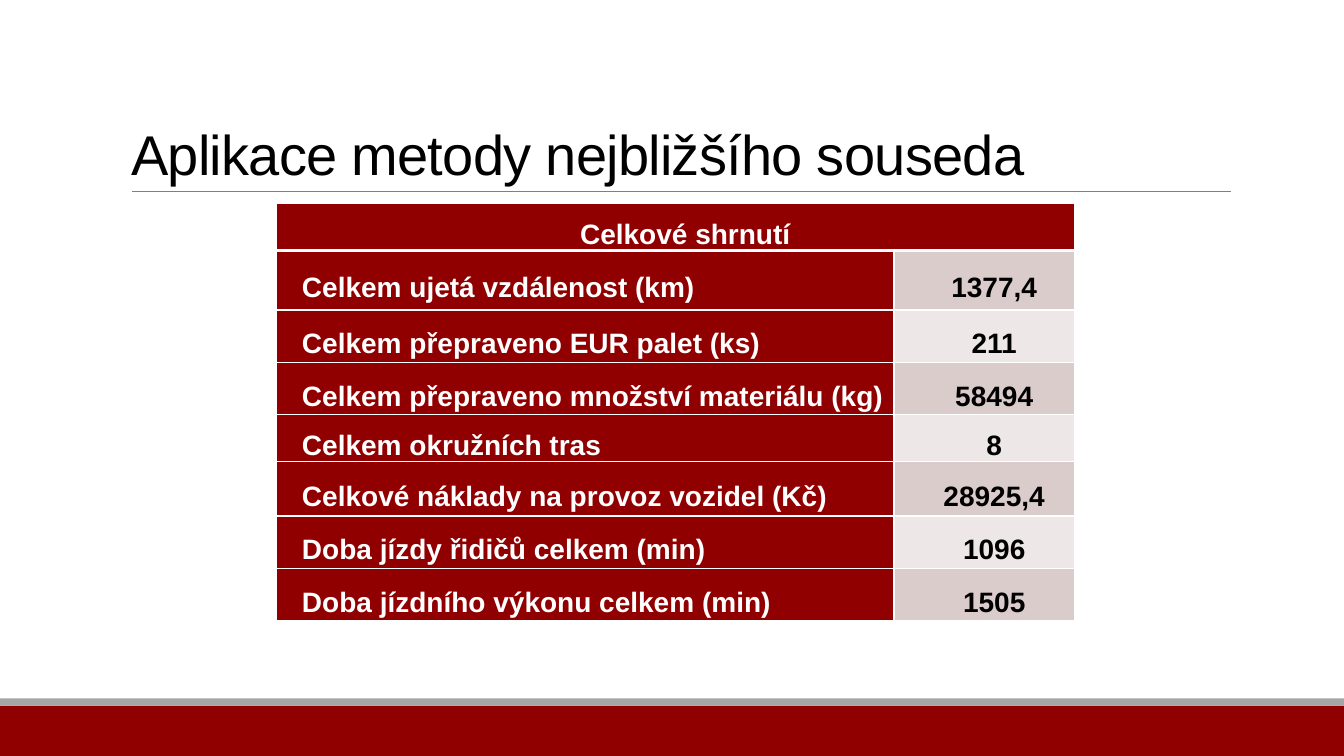
from typing import Any, NamedTuple

from lxml.etree import SubElement
from pptx import Presentation
from pptx.dml.color import RGBColor
from pptx.enum.shapes import MSO_CONNECTOR, MSO_SHAPE
from pptx.enum.text import MSO_ANCHOR as Anchor, MSO_AUTO_SIZE as AutoSize, PP_ALIGN as Align
from pptx.oxml.ns import qn
from pptx.util import Cm, Pt

RED, GREY, RULE_GREY = "900000", "A5A5A5", "808080"
WHITE, BLACK = "FFFFFF", "000000"
STRIPES = ("DBCCCC", "EEE7E7")
FONT = "Arial"


class Band(NamedTuple):
    top: float
    height: float
    color: str


class Row(NamedTuple):
    label: str
    value: str
    height: float


BANDS = (Band(17.78, 1.27, RED), Band(17.6, 0.18, GREY))
HEADING = "Celkové shrnutí"
HEADING_HEIGHT = 0.66
ROWS = (
    Row("Celkem ujetá vzdálenost (km)", "1377,4", 1.5),
    Row("Celkem přepraveno EUR palet (ks)", "211", 1.32),
    Row("Celkem přepraveno množství materiálu (kg)", "58494", 1.32),
    Row("Celkem okružních tras", "8", 0.66),
    Row("Celkové náklady na provoz vozidel (Kč)", "28925,4", 1.37),
    Row("Doba jízdy řidičů celkem (min)", "1096", 1.32),
    Row("Doba jízdního výkonu celkem (min)", "1505", 1.32),
)
COLUMN_WIDTHS = (15.57, 4.55)


def rgb(color: str) -> RGBColor:
    return RGBColor.from_string(color)


def apply(target: Any, **values: Any) -> None:
    """Set each named attribute of the target."""
    for name, value in values.items():
        setattr(target, name, value)


def paint(target: Any, color: str) -> None:
    target.fill.solid()
    target.fill.fore_color.rgb = rgb(color)


def add_band(page: Any, width: int, band: Band) -> None:
    box = page.shapes.add_shape(MSO_SHAPE.RECTANGLE, 0, Cm(band.top), width, Cm(band.height))
    box.shadow.inherit = False
    paint(box, band.color)
    box.line.fill.background()


def add_rule(page: Any) -> None:
    rule = page.shapes.add_connector(MSO_CONNECTOR.STRAIGHT, Cm(3.33), Cm(4.83), Cm(31.01), Cm(4.83))
    rule.line.color.rgb = rgb(RULE_GREY)
    rule.line.width = Pt(0.5)
    SubElement(rule._element.spPr, qn("a:effectLst"))


def set_title(page: Any, text: str) -> None:
    title = page.shapes.title
    apply(title, left=Cm(3.05), top=Cm(0.79), width=Cm(27.94), height=Cm(4.04))
    apply(title.text_frame, text=text, word_wrap=True, auto_size=AutoSize.NONE,
          vertical_anchor=Anchor.BOTTOM)
    para = title.text_frame.paragraphs[0]
    apply(para, alignment=Align.LEFT, line_spacing=0.85)
    span = para.runs[0]
    apply(span.font, name=FONT, size=Pt(40))
    span.font.color.rgb = rgb(BLACK)
    span.font._element.set("spc", "-50")


def add_borders(cell: Any, **points: float) -> None:
    """Give the cell white borders, 1 pt wide unless a side is named."""
    properties = cell._tc.get_or_add_tcPr()
    for side in "LRTB":
        width = Pt(points.get(side, 1))
        border = SubElement(properties, qn(f"a:ln{side}"), w=str(width))
        fill = SubElement(border, qn("a:solidFill"))
        SubElement(fill, qn("a:srgbClr"), val=WHITE)


def style_cell(cell: Any, fill: str, **borders: float) -> None:
    add_borders(cell, **borders)
    paint(cell, fill)
    apply(cell, vertical_anchor=Anchor.MIDDLE, margin_left=Cm(0.15), margin_right=Cm(0.15),
          margin_top=0, margin_bottom=0)


def write_cell(cell: Any, text: str, color: str, alignment: Align) -> None:
    para = cell.text_frame.paragraphs[0]
    apply(para, alignment=alignment, line_spacing=1.5)
    para._p.get_or_add_pPr().set("indent", str(Cm(0.5)))
    span = para.add_run()
    apply(span, text=text)
    apply(span.font, name=FONT, size=Pt(20), bold=True)
    span.font.color.rgb = rgb(color)


def add_summary(page: Any) -> None:
    heights = [HEADING_HEIGHT, *(row.height for row in ROWS)]
    table = page.shapes.add_table(len(heights), len(COLUMN_WIDTHS), Cm(6.96), Cm(5.13),
                                  Cm(sum(COLUMN_WIDTHS)), Cm(sum(heights))).table
    for column, width in zip(table.columns, COLUMN_WIDTHS):
        column.width = Cm(width)
    for table_row, height in zip(table.rows, heights):
        table_row.height = Cm(height)

    for cell in table.rows[0].cells:
        style_cell(cell, RED, B=3)
    table.cell(0, 0).merge(table.cell(0, 1))
    write_cell(table.cell(0, 0), HEADING, WHITE, Align.CENTER)

    for index, row in enumerate(ROWS):
        label, value = table.rows[index + 1].cells
        top = 3 if index == 0 else 1
        style_cell(label, RED, T=top)
        write_cell(label, row.label, WHITE, Align.LEFT)
        style_cell(value, STRIPES[index % 2], T=top)
        write_cell(value, row.value, BLACK, Align.CENTER)


def main() -> None:
    deck = Presentation()
    apply(deck, slide_width=Cm(33.87), slide_height=Cm(19.05))
    page = deck.slides.add_slide(deck.slide_layouts.get_by_name("Title Only"))
    for band in BANDS:
        add_band(page, deck.slide_width, band)
    add_rule(page)
    set_title(page, "Aplikace metody nejbližšího souseda")
    add_summary(page)
    deck.save("out.pptx")


if __name__ == "__main__":
    main()
